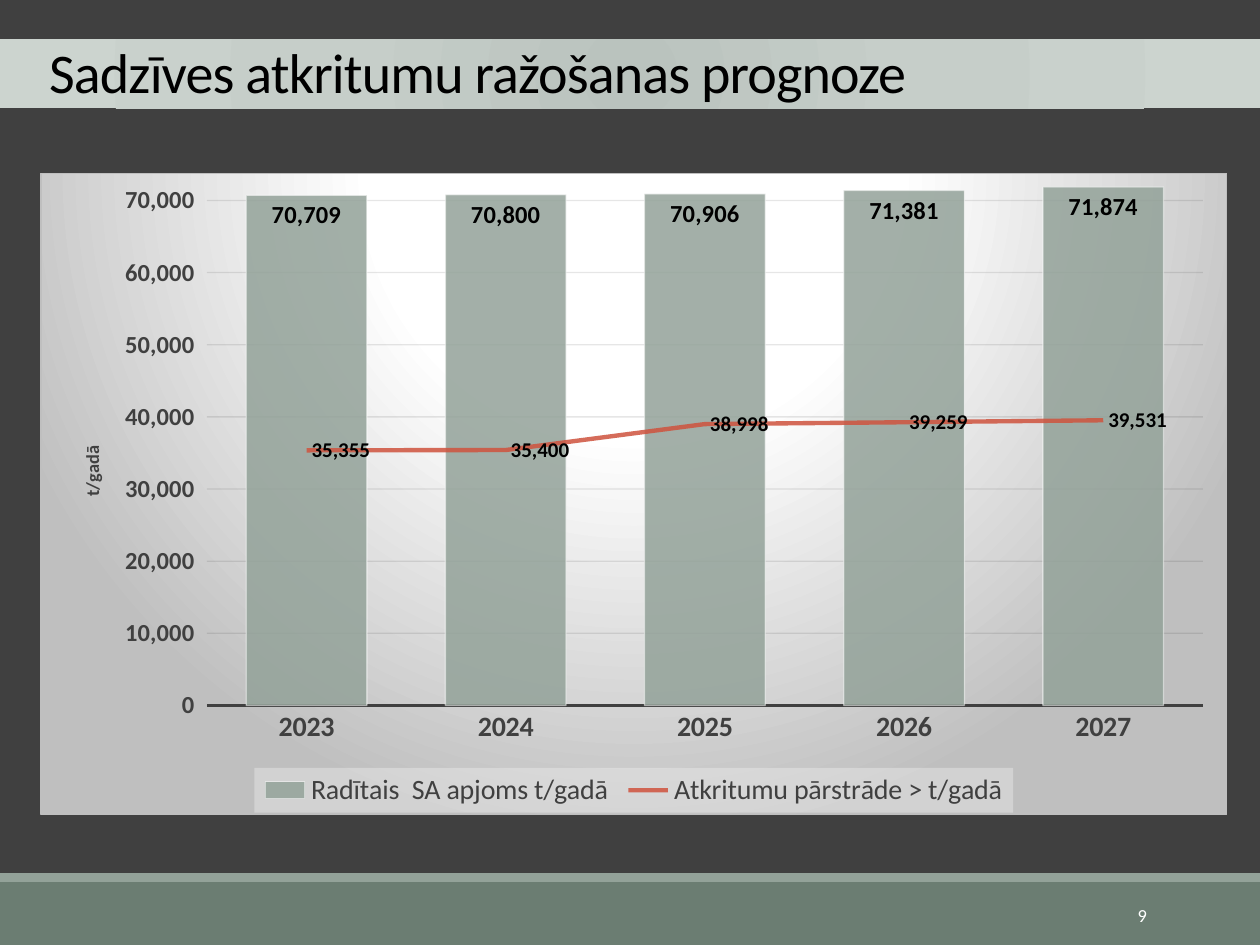
from lxml.etree import SubElement
from pptx import Presentation
from pptx.chart.data import CategoryChartData
from pptx.dml.color import RGBColor
from pptx.enum.chart import XL_CHART_TYPE as ChartType, XL_LABEL_POSITION as LabelPos
from pptx.enum.chart import XL_LEGEND_POSITION as LegendPos, XL_TICK_MARK as TickMark
from pptx.enum.shapes import MSO_SHAPE as Shape
from pptx.enum.text import MSO_ANCHOR as Anchor, PP_ALIGN as Align
from pptx.oxml import parse_xml
from pptx.oxml.ns import nsdecls, qn
from pptx.util import Inches, Pt

COLORS = {
    "dark": "404040", "footer": "6B7D72", "sage": "93A299", "red": "CF543F",
    "black": "000000", "white": "FFFFFF", "grid": "0D0D0D", "silver": "BFBFBF",
    "legend": "F2F2F2",
}
TITLE_STOPS = [(0, "BAC3BE"), (45, "C6CEC9"), (100, "CCD4CF")]
CHART_STOPS = [(0, COLORS["white"]), (39, COLORS["white"]), (100, COLORS["silver"])]
YEARS = ["2023", "2024", "2025", "2026", "2027"]
SERIES = {
    "Radītais  SA apjoms t/gadā": [70709, 70800, 70906, 71381, 71874],
    "Atkritumu pārstrāde > t/gadā": [35355, 35400, 38998, 39259, 39531],
}


def rgb(name):
    return RGBColor.from_string(COLORS[name])


def style_font(font, size, color, bold=False):
    values = {"size": Pt(size), "name": "Calibri", "bold": bold}
    for key, value in values.items():
        setattr(font, key, value)
    font.color.rgb = rgb(color)


def solid(fill, color, alpha=100):
    fill.solid()
    fill.fore_color.rgb = rgb(color)
    set_alpha(fill._xPr, alpha)


def stroke(line, color, width, alpha=100):
    line.width = Pt(width)
    line.color.rgb = rgb(color)
    set_alpha(line._get_or_add_ln(), alpha)


def set_alpha(parent, alpha):
    if alpha < 100:
        color = parent.find(qn("a:solidFill")).find(qn("a:srgbClr"))
        SubElement(color, qn("a:alpha")).set("val", str(alpha * 1000))


def circle_gradient(stops, left, top, right, bottom):
    marks = "".join(
        f'<a:gs pos="{at * 1000}"><a:srgbClr val="{color}"/></a:gs>' for at, color in stops)
    return parse_xml(
        f'<a:gradFill {nsdecls("a")} rotWithShape="1"><a:gsLst>{marks}</a:gsLst>'
        f'<a:path path="circle"><a:fillToRect l="{left * 1000}" t="{top * 1000}" '
        f'r="{right * 1000}" b="{bottom * 1000}"/></a:path></a:gradFill>')


def manual_layout(parent, after=None, target=None, **place):
    """Fix a chart part at fractions of the chart, after the given child tag."""
    for old in parent.findall(qn("c:layout")):
        parent.remove(old)
    layout = parse_xml(f'<c:layout {nsdecls("c")}><c:manualLayout/></c:layout>')
    settings = {"layoutTarget": target} if target else {}
    settings |= {"xMode": "edge", "yMode": "edge"} | place
    for tag, value in settings.items():
        SubElement(layout[0], qn(f"c:{tag}")).set("val", str(value))
    if after:
        parent.find(qn(after)).addnext(layout)
    else:
        parent.insert(0, layout)


def add_bar(page, box, color):
    bar = page.shapes.add_shape(Shape.RECTANGLE, *map(Inches, box))
    bar.shadow.inherit = False
    bar.line.fill.background()
    solid(bar.fill, color)
    return bar


def add_text(frame, text, size, color, align):
    frame.word_wrap = True
    frame.vertical_anchor = Anchor.MIDDLE
    para = frame.paragraphs[0]
    para.alignment = align
    span = para.add_run()
    span.text = text
    style_font(span.font, size, color)
    return para, span


def add_title(page, box):
    band = add_bar(page, box, "sage")
    fill = band._element.spPr.find(qn("a:solidFill"))
    fill.getparent().replace(fill, circle_gradient(TITLE_STOPS, 100, 100, 100, 100))
    frame = band.text_frame
    for side, inset in {"left": 0.39, "top": 0.12, "right": 0.1, "bottom": 0.08}.items():
        setattr(frame, f"margin_{side}", Inches(inset))
    para, span = add_text(
        frame, "Sadzīves atkritumu ražošanas prognoze", 32, "black", Align.LEFT)
    para.line_spacing = 0.85
    span.font._element.set("spc", "-50")


def add_footer(page, box):
    left, top, width, height = box
    add_bar(page, (left, top + 0.07, width, height - 0.07), "footer")
    add_bar(page, (left, top, width, 0.07), "sage")
    number = page.shapes.add_textbox(*map(Inches, (left + 8.12, top + 0.13, 1.08, 0.4)))
    add_text(number.text_frame, "9", 10.5, "white", Align.RIGHT)


def move_to_line_plot(chart):
    """Turn the second column series into a line on the same axes."""
    bars = chart.plots[0]._element
    series = bars.findall(qn("c:ser"))[1]
    for flag in series.findall(qn("c:invertIfNegative")):
        series.remove(flag)
    lines = parse_xml(
        f'<c:lineChart {nsdecls("c")}><c:grouping val="stacked"/><c:varyColors val="0"/>'
        '<c:marker val="1"/></c:lineChart>')
    lines.insert(2, series)
    for axis in bars.findall(qn("c:axId")):
        SubElement(lines, qn("c:axId")).set("val", axis.get("val"))
    series.append(parse_xml(f'<c:smooth {nsdecls("c")} val="0"/>'))
    series.find(qn("c:tx")).addnext(
        parse_xml(f'<c:marker {nsdecls("c")}><c:symbol val="none"/></c:marker>'))
    bars.addnext(lines)


def label_series(series, size, position):
    labels = series.data_labels
    values = {"show_value": True, "number_format": "#,##0",
              "number_format_is_linked": False, "position": position}
    for key, value in values.items():
        setattr(labels, key, value)
    style_font(labels.font, size, "black", True)


def style_axes(chart):
    years, tons = chart.category_axis, chart.value_axis
    years.major_tick_mark = TickMark.NONE
    style_font(years.tick_labels.font, 16, "dark", True)
    stroke(years.format.line, "dark", 1.5)
    scale = {"minimum_scale": 0, "maximum_scale": 72000, "major_unit": 10000,
             "major_tick_mark": TickMark.OUTSIDE, "has_major_gridlines": True}
    for key, value in scale.items():
        setattr(tons, key, value)
    tons.tick_labels.number_format = "#,##0"
    tons.tick_labels.number_format_is_linked = False
    style_font(tons.tick_labels.font, 14, "dark", True)
    tons.format.line.fill.background()
    stroke(tons.major_gridlines.format.line, "grid", 0.75, 10)
    frame = tons.axis_title.text_frame
    span = frame.paragraphs[0].add_run()
    span.text = "t/gadā"
    style_font(span.font, 10.5, "dark", True)
    frame._element.find(qn("a:bodyPr")).set("rot", "-5400000")
    manual_layout(tons.axis_title._element, "c:tx", x=0.03, y=0.42)


def style_legend(chart):
    chart.has_legend = True
    legend = chart.legend
    legend.position = LegendPos.BOTTOM
    legend.include_in_layout = False
    style_font(legend.font, 16, "dark")
    manual_layout(legend._element, "c:legendPos", x=0.18, y=0.93, w=0.64, h=0.07)
    legend._element.find(qn("c:overlay")).addnext(parse_xml(
        f'<c:spPr {nsdecls("c", "a")}><a:solidFill><a:srgbClr val="{COLORS["legend"]}">'
        '<a:alpha val="39000"/></a:srgbClr></a:solidFill></c:spPr>'))


def style_background(chart):
    area = parse_xml(
        f'<c:spPr {nsdecls("c", "a")}><a:ln w="9525"><a:solidFill>'
        f'<a:srgbClr val="{COLORS["silver"]}"/></a:solidFill></a:ln></c:spPr>')
    area.insert(0, circle_gradient(CHART_STOPS, 50, -80, 50, 180))
    body = chart._chartSpace.find(qn("c:chart"))
    body.addnext(area)
    plot_area = body.find(qn("c:plotArea"))
    plot_area.append(parse_xml(f'<c:spPr {nsdecls("c", "a")}><a:noFill/></c:spPr>'))
    manual_layout(plot_area, target="inner", x=0.14, y=0.02, w=0.84, h=0.81)


def add_forecast_chart(page, box):
    data = CategoryChartData(number_format="#,##0")
    data.categories = YEARS
    for name, values in SERIES.items():
        data.add_series(name, values)
    chart = page.shapes.add_chart(
        ChartType.COLUMN_CLUSTERED, *map(Inches, box), data).chart
    chart.has_title = False
    style_font(chart.font, 10, "white")
    move_to_line_plot(chart)
    columns, lines = chart.plots
    columns.gap_width = 65
    columns.vary_by_categories = False
    produced, recycled = columns.series[0], lines.series[0]
    solid(produced.format.fill, "sage", 85)
    stroke(produced.format.line, "white", 0.75, 50)
    stroke(recycled.format.line, "red", 2.5, 85)
    label_series(produced, 14, LabelPos.INSIDE_END)
    label_series(recycled, 12, LabelPos.RIGHT)
    style_axes(chart)
    style_legend(chart)
    style_background(chart)


def main():
    deck = Presentation()
    deck.slide_width, deck.slide_height = Inches(10), Inches(7.5)
    page = deck.slides.add_slide(deck.slide_layouts[6])
    solid(page.background.fill, "dark")
    add_footer(page, (0, 6.93, 10, 0.57))
    add_title(page, (0, 0.31, 10, 0.55))
    add_forecast_chart(page, (0.32, 1.37, 9.42, 5.1))
    deck.save("out.pptx")


if __name__ == "__main__":
    main()
